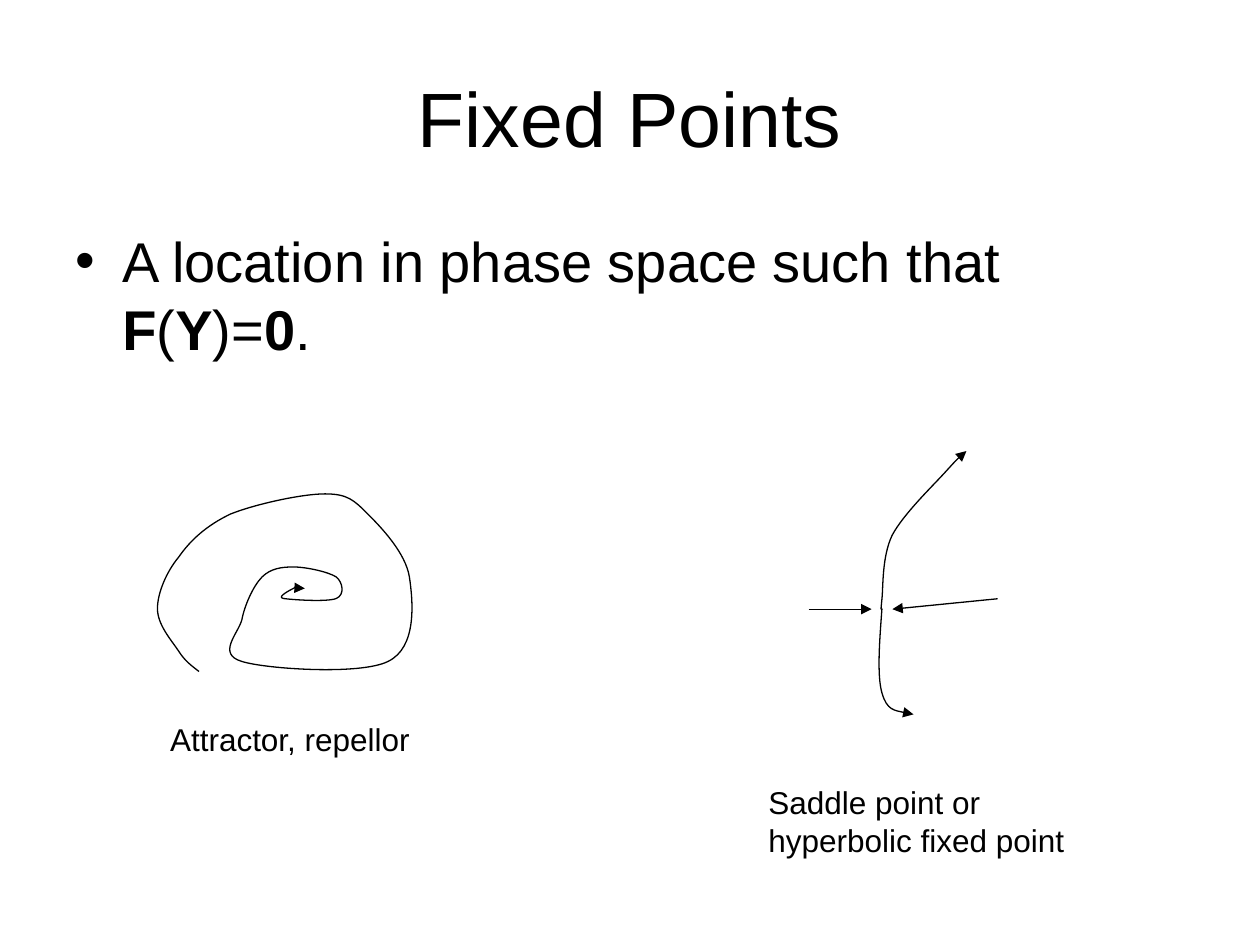
from dataclasses import dataclass

from lxml.etree import SubElement
from pptx import Presentation
from pptx.dml.color import RGBColor
from pptx.enum.shapes import MSO_CONNECTOR
from pptx.enum.text import MSO_ANCHOR, PP_ALIGN
from pptx.oxml.ns import qn
from pptx.slide import Slide
from pptx.util import Cm, Pt

COLORS = {"ink": "000000", "paper": "FFFFFF"}
FONT = "Arial"
CURVE_UNIT = Cm(2.54) / 100

Point = tuple[int, int]
Span = tuple[str, bool]


@dataclass
class Curve:
    start: Point
    bends: list[tuple[Point, Point, Point]]


@dataclass
class Arrow:
    start: tuple[float, float]
    end: tuple[float, float]


@dataclass
class Label:
    text: str
    left: float
    top: float
    width: float
    height: float


SPIRAL = Curve((158, 533), [
    ((153, 529), (147, 525), (142, 517)),
    ((136, 508), (125, 496), (125, 483)),
    ((125, 471), (132, 454), (142, 442)),
    ((151, 429), (164, 417), (183, 408)),
    ((203, 400), (240, 392), (258, 392)),
    ((276, 392), (281, 397), (292, 408)),
    ((303, 419), (322, 439), (325, 458)),
    ((328, 478), (331, 514), (308, 525)),
    ((286, 536), (211, 531), (192, 525)),
    ((172, 519), (189, 503), (192, 492)),
    ((194, 481), (201, 465), (208, 458)),
    ((215, 451), (224, 450), (233, 450)),
    ((243, 450), (261, 454), (267, 458)),
    ((272, 462), (274, 472), (267, 475)),
    ((260, 478), (231, 476), (225, 475)),
    ((219, 474), (231, 468), (233, 467)),
    ((236, 465), (240, 467), (242, 467)),
])
UPWARD_BRANCH = Curve((700, 483), [
    ((699, 484), (699, 485), (700, 475)),
    ((701, 465), (700, 442), (708, 425)),
    ((717, 408), (740, 386), (750, 375)),
    ((760, 364), (763, 361), (767, 358)),
])
DOWNWARD_BRANCH = Curve((700, 483), [
    ((698, 510), (696, 536), (700, 550)),
    ((704, 564), (715, 565), (725, 567)),
])
INFLOWS = [
    Arrow((16.3, 12.28), (17.57, 12.28)),
    Arrow((20.11, 12.07), (17.99, 12.28)),
]
LABELS = [
    Label("Attractor, repellor", 3.18, 14.4, 5.51, 1.02),
    Label("Saddle point or hyperbolic fixed point", 15.24, 15.66, 6.99, 1.78),
]


def add_text(page: Slide, spans: list[Span], *, left: float, top: float,
             width: float, height: float, size: int,
             align: PP_ALIGN = PP_ALIGN.LEFT,
             anchor: MSO_ANCHOR = MSO_ANCHOR.TOP,
             bullet: str = "", hanging: float = 0) -> None:
    box = page.shapes.add_textbox(Cm(left), Cm(top), Cm(width), Cm(height))
    frame = box.text_frame
    frame.word_wrap = True
    frame.vertical_anchor = anchor
    para = frame.paragraphs[0]
    para.alignment = align
    if bullet:
        properties = para._p.get_or_add_pPr()
        properties.set("marL", str(Cm(hanging)))
        properties.set("indent", str(-Cm(hanging)))
        SubElement(properties, qn("a:buFont"), typeface=FONT)
        SubElement(properties, qn("a:buChar"), char=bullet)
    for text, bold in spans:
        span = para.add_run()
        span.text = text
        span.font.name = FONT
        span.font.size = Pt(size)
        span.font.bold = bold
        span.font.color.rgb = RGBColor.from_string(COLORS["ink"])


def style_arrow(shape) -> None:
    shape.line.color.rgb = RGBColor.from_string(COLORS["ink"])
    shape.line.width = Pt(0.75)
    SubElement(shape.line._get_or_add_ln(), qn("a:tailEnd"), type="triangle")


def add_curve(page: Slide, curve: Curve) -> None:
    builder = page.shapes.build_freeform(*curve.start, scale=CURVE_UNIT)
    for bend in curve.bends:
        builder.add_line_segments(bend, close=False)
    shape = builder.convert_to_shape()
    shape.shadow.inherit = False
    shape.fill.background()
    outline = next(shape._element.iter(qn("a:path")))
    segments = outline.findall(qn("a:lnTo"))
    for first in range(0, len(segments), 3):
        bezier = SubElement(outline, qn("a:cubicBezTo"))
        for segment in segments[first:first + 3]:
            bezier.append(segment[0])
            outline.remove(segment)
    style_arrow(shape)


def add_arrow(page: Slide, arrow: Arrow) -> None:
    ends = [Cm(length) for length in (*arrow.start, *arrow.end)]
    connector = page.shapes.add_connector(MSO_CONNECTOR.STRAIGHT, *ends)
    style_arrow(connector)
    SubElement(connector._element.spPr, qn("a:effectLst"))


def main() -> None:
    deck = Presentation()
    deck.slide_width, deck.slide_height = Cm(25.4), Cm(19.05)
    page = deck.slides.add_slide(deck.slide_layouts[6])
    page.background.fill.solid()
    page.background.fill.fore_color.rgb = RGBColor.from_string(COLORS["paper"])

    add_text(page, [("Fixed Points", False)], left=1.27, top=0.76,
             width=22.86, height=3.18, size=44,
             align=PP_ALIGN.CENTER, anchor=MSO_ANCHOR.MIDDLE)
    definition = [("A location in phase space such that ", False),
                  ("F", True), ("(", False), ("Y", True),
                  (")=", False), ("0", True), (".", False)]
    add_text(page, definition, left=1.27, top=4.45, width=22.86,
             height=12.57, size=32, bullet="•", hanging=0.95)
    for curve in (SPIRAL, UPWARD_BRANCH, DOWNWARD_BRANCH):
        add_curve(page, curve)
    for arrow in INFLOWS:
        add_arrow(page, arrow)
    for label in LABELS:
        add_text(page, [(label.text, False)], left=label.left, top=label.top,
                 width=label.width, height=label.height, size=18)

    deck.save("out.pptx")


if __name__ == "__main__":
    main()
